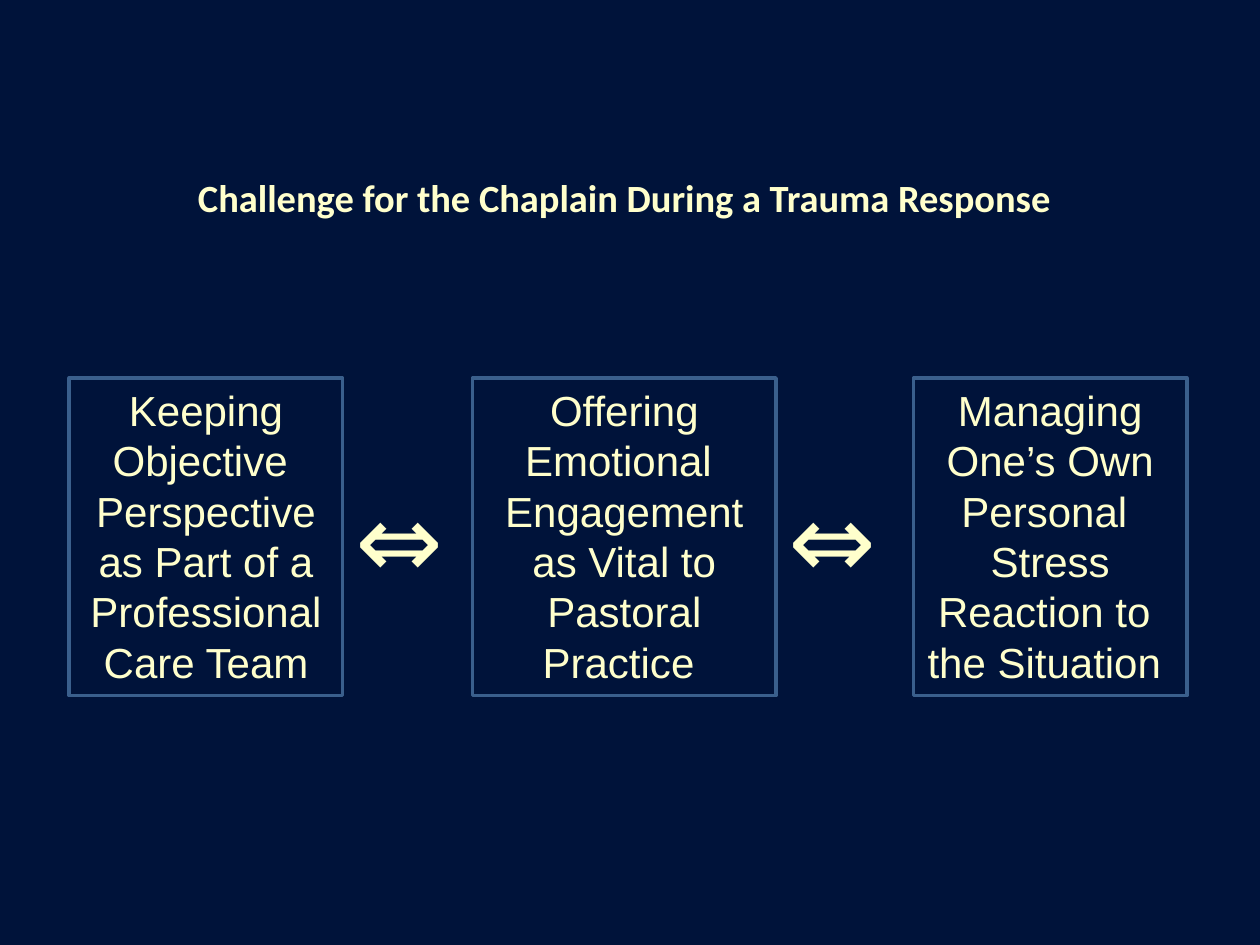
from pptx import Presentation
from pptx.dml.color import RGBColor
from pptx.enum import shapes, text
from pptx.util import Inches, Pt

NAVY, CREAM, STEEL = "00133A", "FFFFCC", "3A5F8C"
ROW_TOP, ROW_HEIGHT = 3, 2.52

# Left edge, width and lines of each challenge
CHALLENGES = [
    (0.55, 2.17, ["Keeping", "Objective ", "Perspective", "as Part of a",
                  "Professional", "Care Team"]),
    (3.75, 2.41, ["Offering Emotional ", "Engagement as Vital to",
                  "Pastoral Practice "]),
    (7.25, 2.17, ["Managing", "One’s Own Personal ", "Stress Reaction to ",
                  "the Situation "]),
]


def color(value):
    return RGBColor.from_string(value)


def write(frame, lines, size, font, align, bold=False):
    frame.word_wrap = True
    frame.vertical_anchor = text.MSO_ANCHOR.TOP
    frame.text = "\n".join(lines)
    for paragraph in frame.paragraphs:
        paragraph.alignment = align
        for run in paragraph.runs:
            run.font.size = Pt(size)
            run.font.name = font
            run.font.bold = bold
            run.font.color.rgb = color(CREAM)


def add_label(slide, box, wording, size, align, bold=False):
    label = slide.shapes.add_textbox(*map(Inches, box))
    write(label.text_frame, [wording], size, "Calibri", align, bold)


def add_challenge(slide, box, lines):
    challenge = slide.shapes.add_shape(
        shapes.MSO_SHAPE.RECTANGLE, *map(Inches, box))
    challenge.shadow.inherit = False
    challenge.fill.background()
    challenge.line.color.rgb = color(STEEL)
    challenge.line.width = Pt(2)
    write(challenge.text_frame, lines, 24, "Arial", text.PP_ALIGN.CENTER)


def add_challenge_row(slide, top, height):
    for index, (left, width, lines) in enumerate(CHALLENGES):
        add_challenge(slide, (left, top, width, height), lines)
        # A double arrow follows every challenge but the last
        if index < len(CHALLENGES) - 1:
            add_label(slide, (left + width, top + 0.71, 1.01, 1.11), "⇔", 60,
                      text.PP_ALIGN.LEFT)


def main():
    deck = Presentation()
    deck.slide_width, deck.slide_height = Inches(10), Inches(7.5)
    slide = deck.slides.add_slide(deck.slide_layouts[6])
    slide.background.fill.solid()
    slide.background.fill.fore_color.rgb = color(NAVY)

    # Title
    add_label(slide, (0.79, 1.33, 8.33, 0.47),
              "Challenge for the Chaplain During a Trauma Response", 22,
              text.PP_ALIGN.CENTER, bold=True)
    # Three linked challenges
    add_challenge_row(slide, ROW_TOP, ROW_HEIGHT)
    deck.save("out.pptx")


if __name__ == "__main__":
    main()
